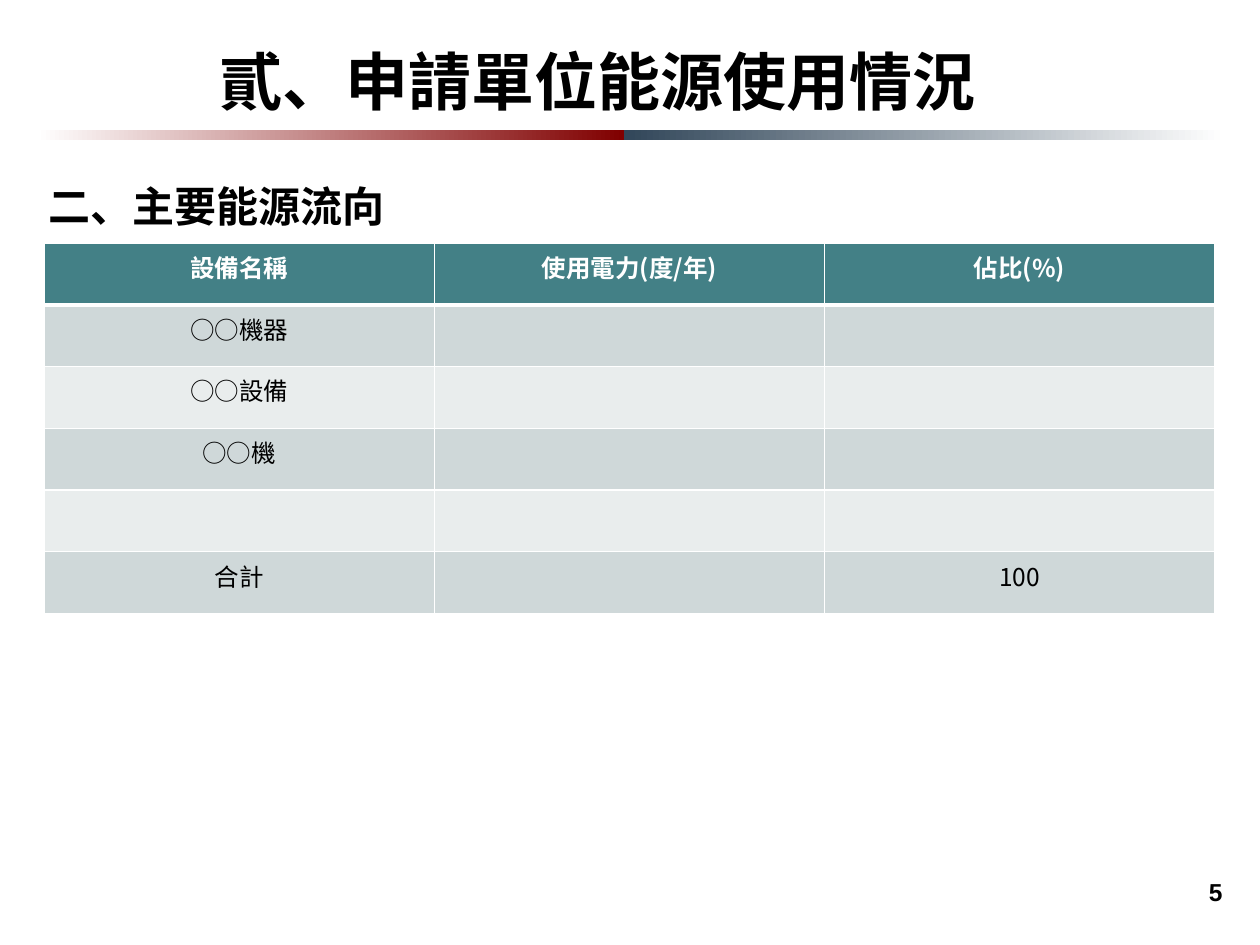
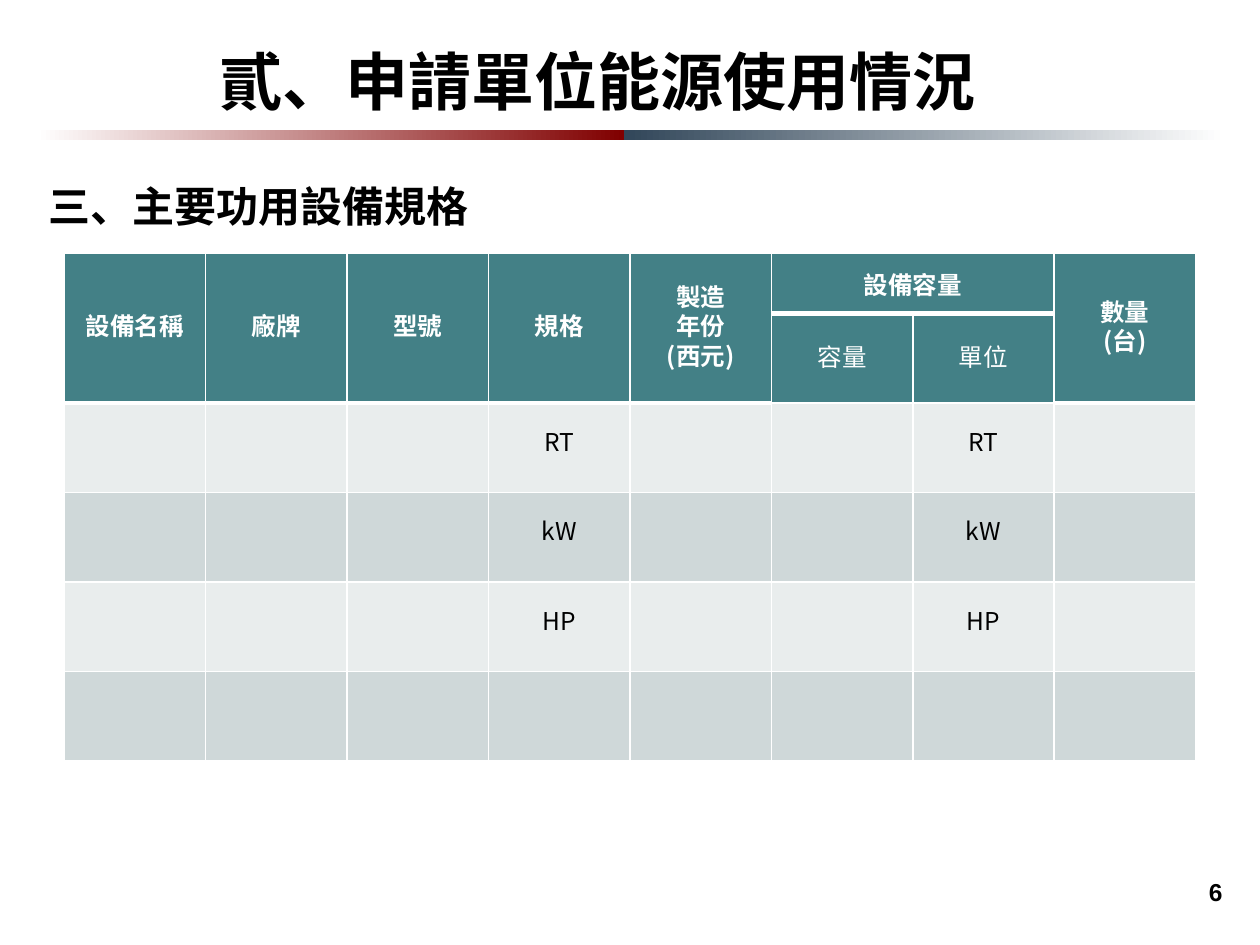
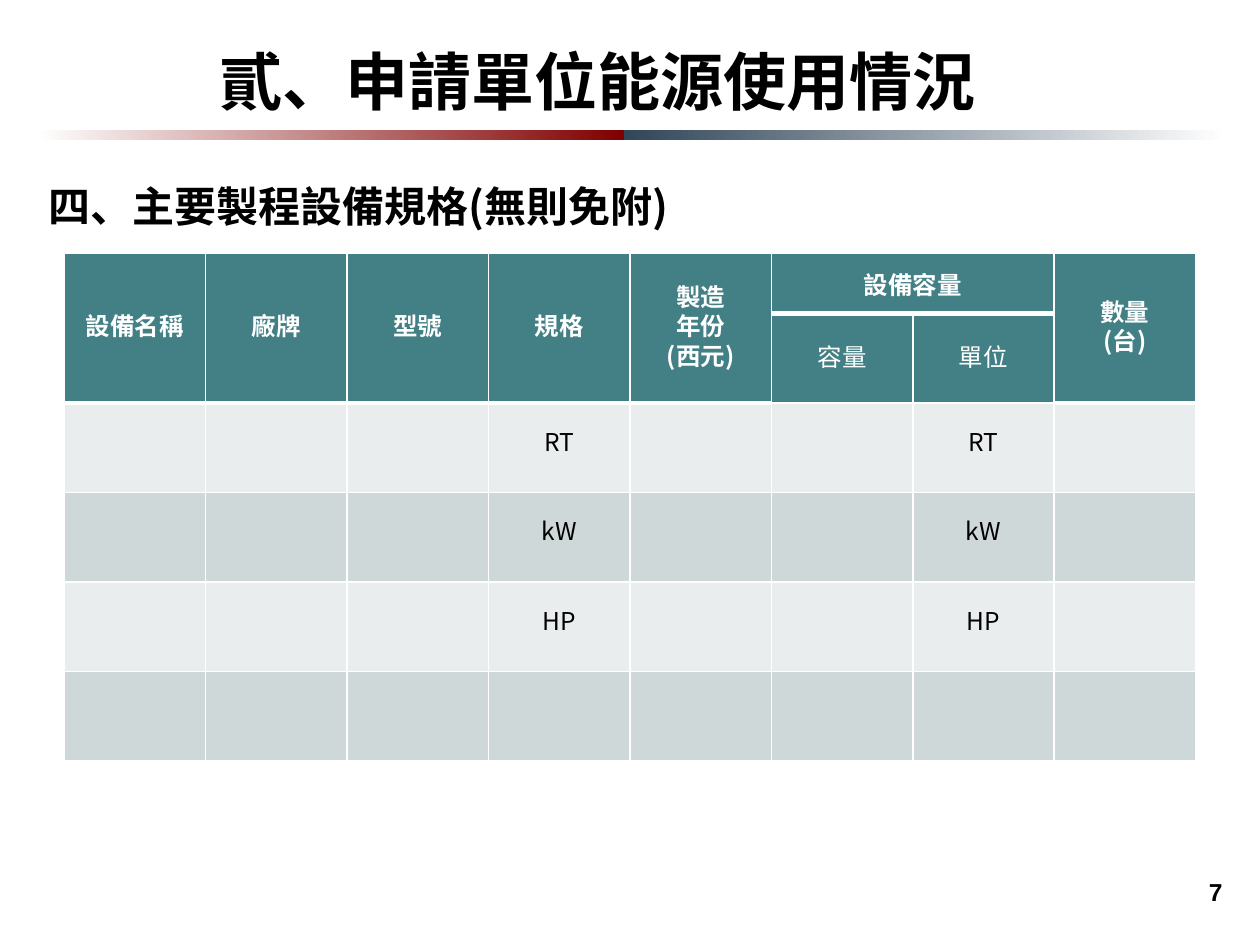
from collections import namedtuple

from lxml.etree import SubElement
from pptx import Presentation
from pptx.dml.color import RGBColor
from pptx.enum.shapes import MSO_SHAPE as Shape
from pptx.enum.text import MSO_ANCHOR as Anchor, MSO_AUTO_SIZE as AutoSize, PP_ALIGN as Align
from pptx.oxml.ns import qn
from pptx.util import Inches, Pt

# Shared style
BLACK = RGBColor(0x00, 0x00, 0x00)
WHITE = RGBColor(0xFF, 0xFF, 0xFF)
RED = RGBColor(0x80, 0x00, 0x00)
NAVY = RGBColor(0x31, 0x46, 0x59)
TEAL = RGBColor(0x43, 0x80, 0x86)
DARK_BAND = RGBColor(0xCF, 0xD8, 0xD9)
LIGHT_BAND = RGBColor(0xE9, 0xED, 0xED)
CJK = "Noto Sans CJK SC"
THIN, THICK = 1, 3

# Content: a cell is (row, column, paragraphs); a heading may span cells
TITLE = "貳、申請單位能源使用情況"
FIRST_PAGE = 5
Heading = namedtuple("Heading", "row col text rows cols line bold thick",
                     defaults=(1, 1, 12, True, True))

ENERGY_FLOW = {
    "at": (0.35, 1.93), "width": 9.29, "columns": 3, "rows": [0.49] * 6,
    "heading_rows": 1, "bands": (DARK_BAND, LIGHT_BAND),
    "headings": [Heading(0, col, text) for col, text in
                 enumerate(["設備名稱", "使用電力(度/年)", "佔比(%)"])],
    "body": [(1, 0, "○○機器"), (2, 0, "○○設備"), (3, 0, "○○機")],
    "totals": [(5, 0, "合計"), (5, 2, "100")],
}

EQUIPMENT = {
    "at": (0.51, 2.01), "width": 8.98, "columns": 8, "rows": [0.48, 0.32] + [0.71] * 4,
    "heading_rows": 2, "bands": (LIGHT_BAND, DARK_BAND),
    "headings": [Heading(0, col, text, rows=2, line=17) for col, text in
                 [(0, "設備名稱"), (1, "廠牌"), (2, "型號"), (3, "規格"),
                  (4, "製造\v年份\n(西元)"), (7, "數量\v(台)")]]
                + [Heading(0, 5, "設備容量", cols=2, line=None)]
                + [Heading(1, col, text, line=17, bold=False, thick=False)
                   for col, text in [(5, "容量"), (6, "單位")]],
    "body": [(row, col, unit) for row, unit in enumerate(["RT", "kW", "HP"], start=2)
             for col in (3, 6)],
    "totals": [],
}

PAGES = [
    ("二、主要能源流向", ENERGY_FLOW),
    ("三、主要功用設備規格", EQUIPMENT),
    ("四、主要製程設備規格(無則免附)", EQUIPMENT),
]


def write(frame, text, size, align, color=BLACK, bold=True, font=CJK, line=None):
    """Write text; a newline starts a paragraph and a vertical tab a line."""
    for number, part in enumerate(text.split("\n")):
        paragraph = frame.add_paragraph() if number else frame.paragraphs[0]
        paragraph.alignment = align
        if line:
            paragraph.line_spacing = line
        for index, words in enumerate(part.split("\v")):
            if index:
                paragraph.add_line_break()
            run = paragraph.add_run()
            run.text = words
            run.font.size, run.font.bold, run.font.name = Pt(size), bold, font
            run.font.color.rgb = color
            SubElement(run.font._element, qn("a:ea"), typeface=font)


def add_text(slide, box, text, size, align, wrap=False, **style):
    frame = slide.shapes.add_textbox(*map(Inches, box)).text_frame
    frame.word_wrap = wrap
    write(frame, text, size, align, **style)
    return frame


def add_rule(slide, left, width, start, end):
    half = slide.shapes.add_shape(Shape.RECTANGLE, *map(Inches, (left, 1.03, width, 0.08)))
    half.shadow.inherit = False
    half.line.fill.background()
    half.fill.gradient()
    half.fill.gradient_angle = 0
    for stop, color in zip(half.fill.gradient_stops, (start, end)):
        stop.color.rgb = color


def add_frame(slide, subtitle, page):
    """Rule, page number, title and subtitle, alike on every slide."""
    add_rule(slide, 0.29, 4.66, WHITE, RED)
    add_rule(slide, 4.95, 4.78, NAVY, WHITE)
    number = add_text(slide, (7.72, 6.83, 2.08, 0.5), str(page), 14, Align.RIGHT, font="Arial")
    number.vertical_anchor = Anchor.MIDDLE
    title = add_text(slide, (1.61, 0.29, 6.26, 0.71), TITLE, 36, Align.CENTER)
    heading = add_text(slide, (0, 1.18, 8.98, 0.63), subtitle, 24, Align.LEFT,
                       wrap=True, line=1.5)
    title.auto_size = heading.auto_size = AutoSize.SHAPE_TO_FIT_TEXT
    paragraph = heading.paragraphs[0]
    paragraph.space_before = Pt(6)
    paragraph._p.get_or_add_pPr().set("indent", str(Inches(0.29)))


def set_borders(cell, top, bottom):
    properties = cell._tc.get_or_add_tcPr()
    for side, width in (("L", THIN), ("R", THIN), ("T", top), ("B", bottom)):
        border = SubElement(properties, qn(f"a:ln{side}"), w=str(Pt(width)))
        fill = SubElement(border, qn("a:solidFill"))
        SubElement(fill, qn("a:srgbClr"), val=str(WHITE))


def fill_cell(cell, text, **style):
    cell.vertical_anchor = Anchor.MIDDLE
    cell.margin_left = cell.margin_right = Inches(0.02)
    cell.margin_top = cell.margin_bottom = 0
    write(cell.text_frame, text, 14, Align.CENTER, **style)


def add_table(slide, spread):
    heights, count = spread["rows"], spread["columns"]
    box = (*spread["at"], spread["width"], sum(heights))
    table = slide.shapes.add_table(len(heights), count, *map(Inches, box)).table
    table.first_row = table.horz_banding = False
    for column in table.columns:
        column.width = Inches(spread["width"] / count)
    for row, height in zip(table.rows, heights):
        row.height = Inches(height)

    # Borders and bands; a thick line closes the main headings
    thick_under = {(h.row + h.rows - 1, h.col + extra)
                   for h in spread["headings"] if h.thick for extra in range(h.cols)}
    # A spanning heading carries its lower border in its first cell too
    thick_under |= {(h.row, h.col) for h in spread["headings"] if h.thick}
    for row in range(len(heights)):
        for col in range(count):
            cell = table.cell(row, col)
            set_borders(cell, THICK if (row - 1, col) in thick_under else THIN,
                        THICK if (row, col) in thick_under else THIN)
            cell.fill.solid()
            body_row = row - spread["heading_rows"]
            cell.fill.fore_color.rgb = TEAL if body_row < 0 else spread["bands"][body_row % 2]

    # Cell text
    for h in spread["headings"]:
        cell = table.cell(h.row, h.col)
        if h.rows * h.cols > 1:
            cell.merge(table.cell(h.row + h.rows - 1, h.col + h.cols - 1))
        fill_cell(cell, h.text, color=WHITE, bold=h.bold, line=h.line and Pt(h.line))
    for row, col, text in spread["body"]:
        fill_cell(table.cell(row, col), text, bold=False, line=Pt(12))
    for row, col, text in spread["totals"]:
        write(table.cell(row, col).text_frame, text, 14, Align.CENTER, bold=False)


def main():
    deck = Presentation()
    deck.slide_width, deck.slide_height = Inches(10), Inches(7.5)
    for page, (subtitle, spread) in enumerate(PAGES, start=FIRST_PAGE):
        slide = deck.slides.add_slide(deck.slide_layouts[6])
        add_frame(slide, subtitle, page)
        add_table(slide, spread)
    deck.save("out.pptx")


if __name__ == "__main__":
    main()
